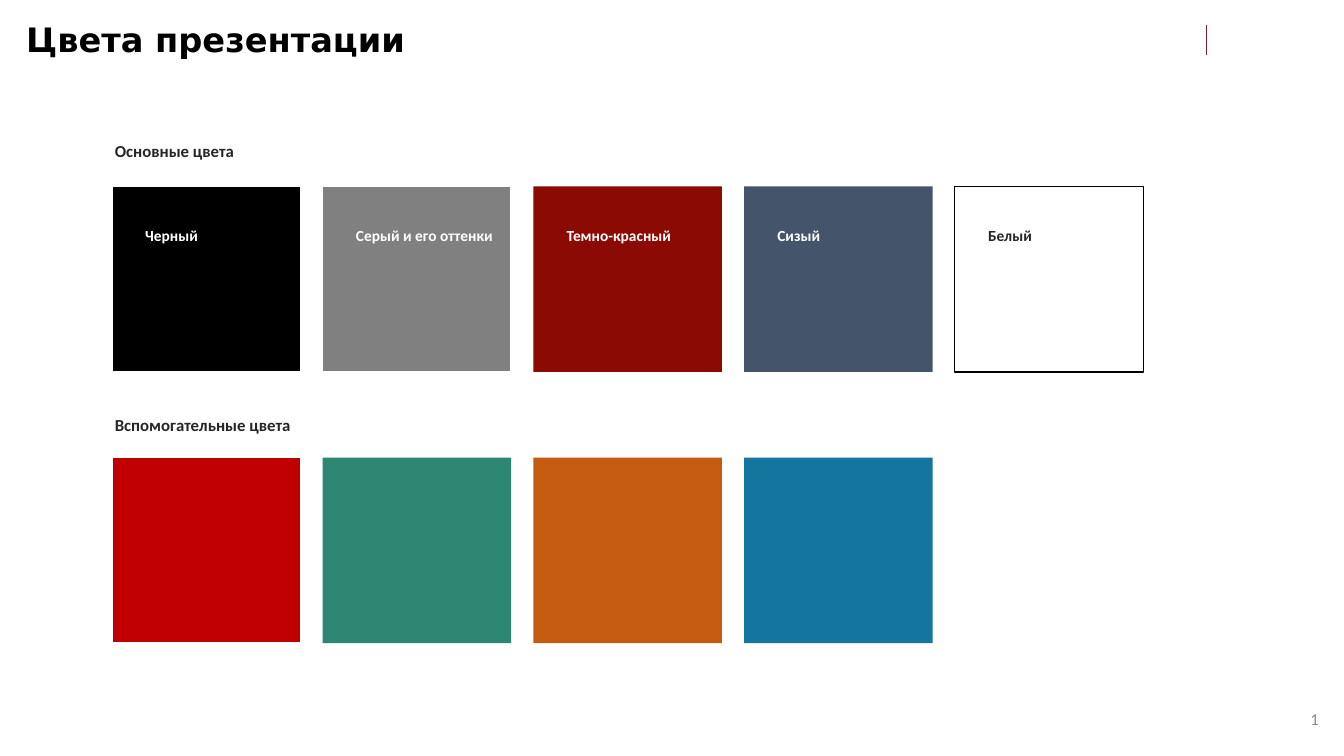
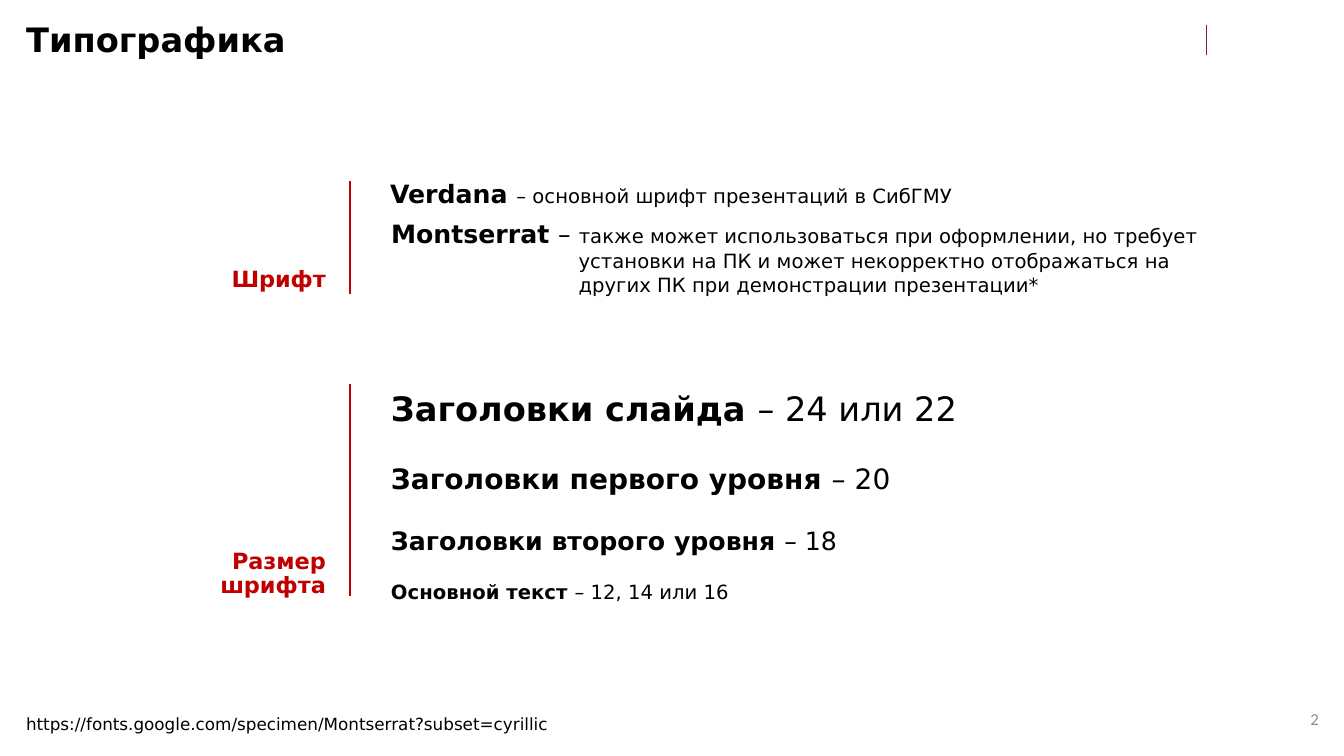
"""Build two style guide slides: presentation colours and typography."""
from dataclasses import dataclass

import lxml.etree
import pptx
import pptx.dml.color
import pptx.enum.shapes
import pptx.enum.text
import pptx.oxml.ns
import pptx.presentation
import pptx.shapes.base
import pptx.slide
import pptx.text.text
import pptx.util

Inches = pptx.util.Inches
Align = pptx.enum.text.PP_ALIGN
Anchor = pptx.enum.text.MSO_ANCHOR

HEADING_FONT, LABEL_FONT = "DejaVu Sans", "Calibri"
BLACK, WHITE, DARK, RED = "000000", "FFFFFF", "262626", "C00000"
PALE_GREY, WINE = "8C8C8C", "7C222E"
SWATCH_LEFT, SWATCH_STEP = 1.11, 2.09
SWATCH_WIDTH, SWATCH_HEIGHT = 1.87, 1.84


@dataclass(frozen=True)
class Style:
    """Paragraph look."""

    font: str
    size: float | None = None
    colour: str = BLACK
    bold: bool | None = None
    align: Align = Align.LEFT
    spacing: float | pptx.util.Length = 1.0


@dataclass(frozen=True)
class Span:
    """Piece of text with its own size and weight."""

    text: str
    size: float
    bold: bool = False


@dataclass(frozen=True)
class Swatch:
    """Colour sample with an optional label and outline."""

    fill: str
    label: str = ""
    text_colour: str = WHITE
    outline: str | None = None


@dataclass(frozen=True)
class SwatchRow:
    """Heading with a row of colour samples."""

    heading: str
    heading_top: float
    top: float
    swatches: tuple[Swatch, ...]


@dataclass(frozen=True)
class Section:
    """Red side label with its vertical rule."""

    label: str
    label_top: float
    label_height: float
    rule_top: float
    rule_bottom: float


TITLE = Style(HEADING_FONT, 24, bold=True, spacing=0.9)
ROW_HEADING = Style(LABEL_FONT, 12, DARK, True, spacing=0.9)
NUMBER = Style(LABEL_FONT, 12, PALE_GREY, align=Align.RIGHT)
SIDE_LABEL = Style(HEADING_FONT, 16, RED, True, Align.RIGHT, 0.9)
BODY = Style(HEADING_FONT)
SIZE_LIST = Style(HEADING_FONT, spacing=2.0)
LINK = Style(HEADING_FONT, 12)

SWATCH_ROWS = (
    SwatchRow("Основные цвета", 1.37, 1.85, (
        Swatch(BLACK, "Черный", outline=WHITE),
        Swatch("808080", "Серый и его оттенки", outline=WHITE),
        Swatch("8B0A04", "Темно-красный"),
        Swatch("44546A", "Сизый"),
        Swatch(WHITE, "Белый", DARK, BLACK),
    )),
    SwatchRow("Вспомогательные цвета", 4.09, 4.54, (
        Swatch(RED, outline=WHITE),
        Swatch("2C8671"),
        Swatch("C55A11"),
        Swatch("12769E"),
    )),
)
SECTIONS = (
    Section("Шрифт", 2.61, 0.36, 1.8, 2.92),
    Section("Размер шрифта", 5.41, 0.5, 3.81, 5.91),
)
MAIN_FONT = (Span("Verdana ", 18, True), Span("– основной шрифт презентаций в СибГМУ", 14))
SPARE_FONT = (
    Span("Montserrat ", 18, True),
    Span("– ", 18),
    Span("также может использоваться при оформлении, но требует установки на ПК "
         "и может некорректно отображаться на других ПК при демонстрации презентации*", 14),
)
SIZES = (
    ("Заголовки слайда", "24 или 22", 24),
    ("Заголовки первого уровня", "20", 20),
    ("Заголовки второго уровня", "18", 18),
    ("Основной текст", "12, 14 или 16", 14),
)


def rgb(value: str) -> pptx.dml.color.RGBColor:
    """Turn a hex string into a colour."""
    return pptx.dml.color.RGBColor.from_string(value)


def style_para(para: pptx.text.text._Paragraph, style: Style) -> None:
    """Apply a style to a paragraph."""
    para.alignment = style.align
    para.line_spacing = style.spacing
    para.font.name = style.font
    para.font.color.rgb = rgb(style.colour)
    if style.size is not None:
        para.font.size = pptx.util.Pt(style.size)
    if style.bold is not None:
        para.font.bold = style.bold


def place(box: pptx.shapes.base.BaseShape, left: float, top: float,
          width: float, height: float) -> None:
    """Move and size a shape."""
    box.left, box.top = Inches(left), Inches(top)
    box.width, box.height = Inches(width), Inches(height)


def add_box(page: pptx.slide.Slide, left: float, top: float, width: float, height: float,
            wrap: bool = True) -> pptx.text.text.TextFrame:
    """Add an empty text box and return its frame."""
    box = page.shapes.add_textbox(Inches(left), Inches(top), Inches(width), Inches(height))
    box.text_frame.word_wrap = wrap
    return box.text_frame


def write(frame: pptx.text.text.TextFrame, text: str, style: Style) -> None:
    """Write one styled paragraph."""
    frame.text = text
    style_para(frame.paragraphs[0], style)


def write_spans(para: pptx.text.text._Paragraph, spans: tuple[Span, ...], style: Style) -> None:
    """Write a paragraph of differing spans."""
    style_para(para, style)
    for span in spans:
        run = para.add_run()
        run.text = span.text
        run.font.size = pptx.util.Pt(span.size)
        run.font.bold = span.bold


def add_rule(page: pptx.slide.Slide, left: float, top: float, bottom: float,
             colour: str, weight: float) -> None:
    """Add a vertical line without a shadow."""
    rule = page.shapes.add_connector(pptx.enum.shapes.MSO_CONNECTOR.STRAIGHT,
                                     Inches(left), Inches(top), Inches(left), Inches(bottom))
    rule.line.color.rgb = rgb(colour)
    rule.line.width = pptx.util.Pt(weight)
    lxml.etree.SubElement(rule._element.spPr, pptx.oxml.ns.qn("a:effectLst"))


def add_number(page: pptx.slide.Slide, number: int) -> None:
    """Add the slide number field."""
    frame = add_box(page, 12.37, 6.93, 0.81, 0.4)
    frame.vertical_anchor = Anchor.MIDDLE
    para = frame.paragraphs[0]
    style_para(para, NUMBER)
    field = lxml.etree.SubElement(para._p, pptx.oxml.ns.qn("a:fld"), type="slidenum",
                                  id="{B6F15528-21DE-4FAA-801E-634DDDAF4B2B}")
    lxml.etree.SubElement(field, pptx.oxml.ns.qn("a:rPr"), lang="ru-RU")
    lxml.etree.SubElement(field, pptx.oxml.ns.qn("a:t")).text = str(number)


def add_page(deck: pptx.presentation.Presentation, title: str, number: int) -> pptx.slide.Slide:
    """Add a slide with the shared title, rule and number."""
    page = deck.slides.add_slide(deck.slide_layouts.get_by_name("Title Only"))
    place(page.shapes.title, 0.16, 0.14, 11.37, 0.55)
    frame = page.shapes.title.text_frame
    frame.auto_size = pptx.enum.text.MSO_AUTO_SIZE.NONE
    frame.vertical_anchor = Anchor.MIDDLE
    write(frame, title, TITLE)
    add_rule(page, 11.97, 0.25, 0.55, WINE, 0.75)
    add_number(page, number)
    return page


def add_swatch(page: pptx.slide.Slide, swatch: Swatch, left: float, top: float) -> None:
    """Draw one colour sample."""
    box = page.shapes.add_shape(pptx.enum.shapes.MSO_SHAPE.RECTANGLE, Inches(left), Inches(top),
                                Inches(SWATCH_WIDTH), Inches(SWATCH_HEIGHT))
    box.shadow.inherit = False
    box.fill.solid()
    box.fill.fore_color.rgb = rgb(swatch.fill)
    if swatch.outline:
        box.line.color.rgb = rgb(swatch.outline)
        box.line.width = pptx.util.Pt(1)
    else:
        box.line.fill.background()
    if swatch.label:
        frame = box.text_frame
        frame.word_wrap = True
        frame.vertical_anchor = Anchor.TOP
        frame.margin_left, frame.margin_top = Inches(0.33), Inches(0.36)
        write(frame, swatch.label, Style(LABEL_FONT, 11, swatch.text_colour, True,
                                         spacing=pptx.util.Pt(16)))


def build_colours(deck: pptx.presentation.Presentation) -> None:
    """Build the colour slide."""
    page = add_page(deck, "Цвета презентации", 3)
    for row in SWATCH_ROWS:
        write(add_box(page, 1.04, row.heading_top, 5.98, 0.44), row.heading, ROW_HEADING)
        for column, swatch in enumerate(row.swatches):
            add_swatch(page, swatch, SWATCH_LEFT + column * SWATCH_STEP, row.top)


def build_typography(deck: pptx.presentation.Presentation) -> None:
    """Build the typography slide."""
    page = add_page(deck, "Типографика", 4)
    for section in SECTIONS:
        write(add_box(page, 1.74, section.label_top, 1.59, section.label_height),
              section.label, SIDE_LABEL)
        add_rule(page, 3.47, section.rule_top, section.rule_bottom, RED, 1.5)

    write_spans(add_box(page, 3.77, 1.72, 6.77, 0.4).paragraphs[0], MAIN_FONT, BODY)
    para = add_box(page, 3.78, 2.12, 8.29, 0.88).paragraphs[0]
    indent = Inches(1.86)
    properties = para._p.get_or_add_pPr()
    properties.set("marL", str(indent))
    properties.set("indent", str(-indent))
    write_spans(para, SPARE_FONT, BODY)

    frame = add_box(page, 3.78, 3.4, 7.53, 2.66)
    for index, (name, points, size) in enumerate(SIZES):
        para = frame.add_paragraph() if index else frame.paragraphs[0]
        write_spans(para, (Span(f"{name} ", size, True), Span(f"– {points}", size)), SIZE_LIST)

    write(add_box(page, 0.16, 7.03, 5.5, 0.3, wrap=False),
          "https://fonts.google.com/specimen/Montserrat?subset=cyrillic", LINK)


def main() -> None:
    """Build and save the deck."""
    deck = pptx.Presentation()
    deck.slide_width, deck.slide_height = Inches(13.33), Inches(7.5)
    build_colours(deck)
    build_typography(deck)
    deck.save("out.pptx")


if __name__ == "__main__":
    main()
